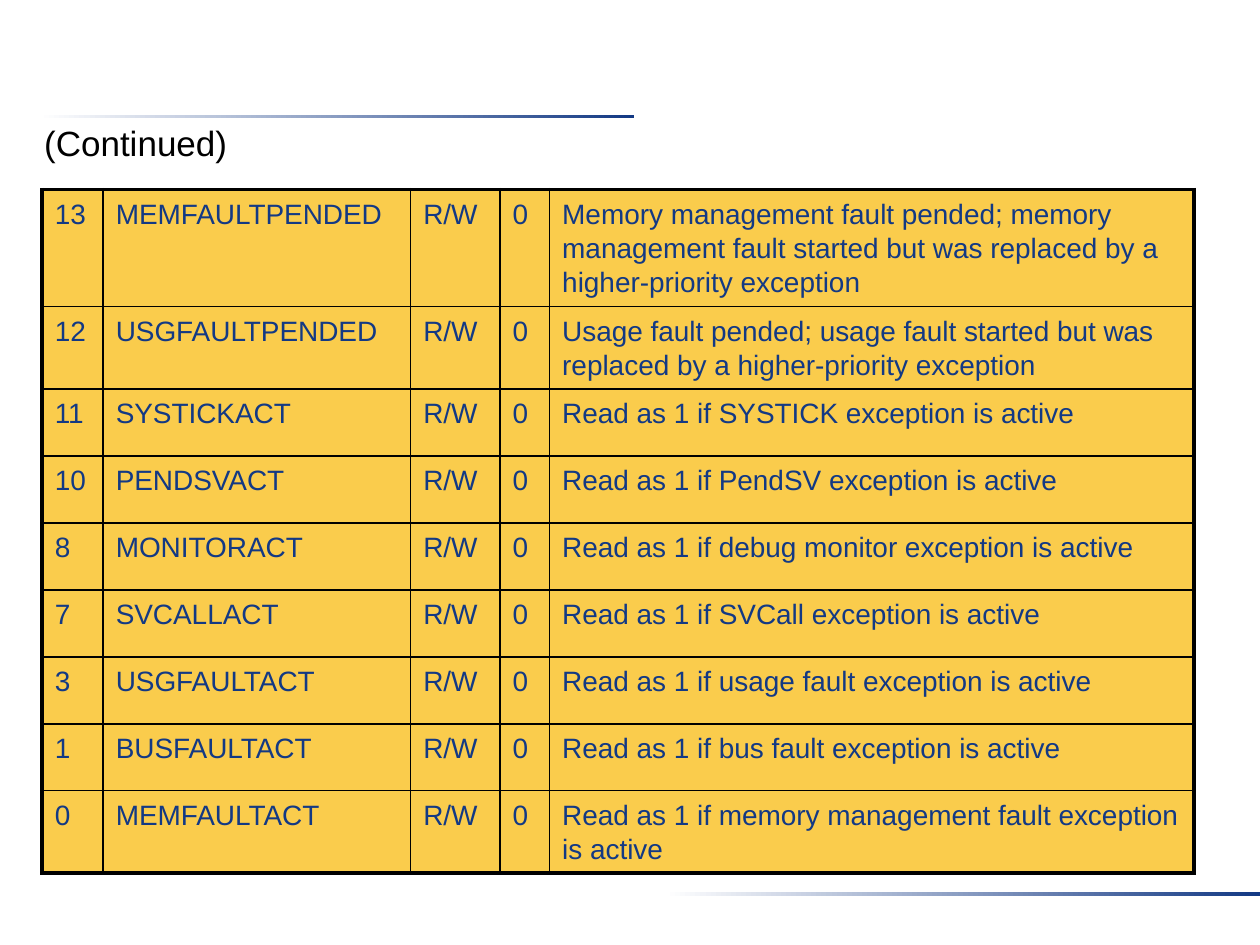
import pptx
import pptx.dml.color
import pptx.enum.shapes
import pptx.enum.text
import pptx.oxml
import pptx.oxml.ns
import pptx.util
from pptx.util import Cm

NAVY, AMBER, BLACK, WHITE = "133984", "FACC4C", "000000", "FFFFFF"
THIN, THICK = 1, 2.25

HEADING = "(Continued)"
FIELDS = [
    (13, "MEMFAULTPENDED", "Memory management fault pended; memory management fault "
                           "started but was replaced by a higher-priority exception"),
    (12, "USGFAULTPENDED", "Usage fault pended; usage fault started but was "
                           "replaced by a higher-priority exception"),
    (11, "SYSTICKACT", "Read as 1 if SYSTICK exception is active"),
    (10, "PENDSVACT", "Read as 1 if PendSV exception is active"),
    (8, "MONITORACT", "Read as 1 if debug monitor exception is active"),
    (7, "SVCALLACT", "Read as 1 if SVCall exception is active"),
    (3, "USGFAULTACT", "Read as 1 if usage fault exception is active"),
    (1, "BUSFAULTACT", "Read as 1 if bus fault exception is active"),
    (0, "MEMFAULTACT", "Read as 1 if memory management fault exception is active"),
]
ACCESS, RESET_VALUE = "R/W", "0"
COLUMN_WIDTHS = [1.23, 6.2, 1.8, 1, 12.99]
ROW_HEIGHTS = [2.36, 1.66] + [1.35] * 6 + [1.66]
RULES = [(0.79, 2.31), (13.41, 17.98)]
RULE_WIDTH, RULE_HEIGHT = 11.99, 0.08


def color(value):
    return pptx.dml.color.RGBColor.from_string(value)


def write(frame, text, *, size, ink, spacing=None):
    para = frame.paragraphs[0]
    para.line_spacing = spacing
    span = para.add_run()
    span.text = text
    span.font.name = "Arial"
    span.font.size = pptx.util.Pt(size)
    span.font.color.rgb = color(ink)


def add_rule(page, left, top):
    rule = page.shapes.add_shape(pptx.enum.shapes.MSO_SHAPE.RECTANGLE, Cm(left), Cm(top),
                                 Cm(RULE_WIDTH), Cm(RULE_HEIGHT))
    rule.shadow.inherit = False
    rule.line.fill.background()
    rule.fill.gradient()
    rule.fill.gradient_angle = 0
    for stop, position, shade in zip(rule.fill.gradient_stops, (0, 1), (WHITE, NAVY)):
        stop.position = position
        stop.color.rgb = color(shade)


def set_borders(cell, widths):
    """Draw the cell's edges; widths are points for left, right, top and bottom."""
    properties = cell._tc.get_or_add_tcPr()
    for index, (side, width) in enumerate(zip("LRTB", widths)):
        properties.insert(index, pptx.oxml.parse_xml(
            f'<a:ln{side} {pptx.oxml.ns.nsdecls("a")} w="{pptx.util.Pt(width)}">'
            f'<a:solidFill><a:srgbClr val="{BLACK}"/></a:solidFill></a:ln{side}>'))


def add_field_table(page):
    table = page.shapes.add_table(
        len(ROW_HEIGHTS), len(COLUMN_WIDTHS), Cm(0.85), Cm(3.82),
        Cm(sum(COLUMN_WIDTHS)), Cm(sum(ROW_HEIGHTS))).table
    table.first_row = table.horz_banding = False
    for column, width in zip(table.columns, COLUMN_WIDTHS):
        column.width = Cm(width)
    last_row, last_column = len(ROW_HEIGHTS) - 1, len(COLUMN_WIDTHS) - 1
    for y, (bit, name, meaning) in enumerate(FIELDS):
        table.rows[y].height = Cm(ROW_HEIGHTS[y])
        for x, text in enumerate((str(bit), name, ACCESS, RESET_VALUE, meaning)):
            cell = table.cell(y, x)
            cell.fill.solid()
            cell.fill.fore_color.rgb = color(AMBER)
            write(cell.text_frame, text, size=16, ink=NAVY, spacing=1.1)
            outer = (x == 0, x == last_column, y == 0, y == last_row)
            set_borders(cell, [THICK if edge else THIN for edge in outer])


def add_heading(page):
    frame = page.shapes.add_textbox(Cm(0.64), Cm(2.32), Cm(4.19), Cm(1.09)).text_frame
    frame.word_wrap = True
    frame.margin_right = 0
    frame.auto_size = pptx.enum.text.MSO_AUTO_SIZE.NONE
    write(frame, HEADING, size=20, ink=BLACK)


def main():
    deck = pptx.Presentation()
    deck.slide_width, deck.slide_height = Cm(25.4), Cm(19.05)
    page = deck.slides.add_slide(deck.slide_layouts[6])
    for left, top in RULES:
        add_rule(page, left, top)
    add_field_table(page)
    add_heading(page)
    deck.save("out.pptx")


if __name__ == "__main__":
    main()
